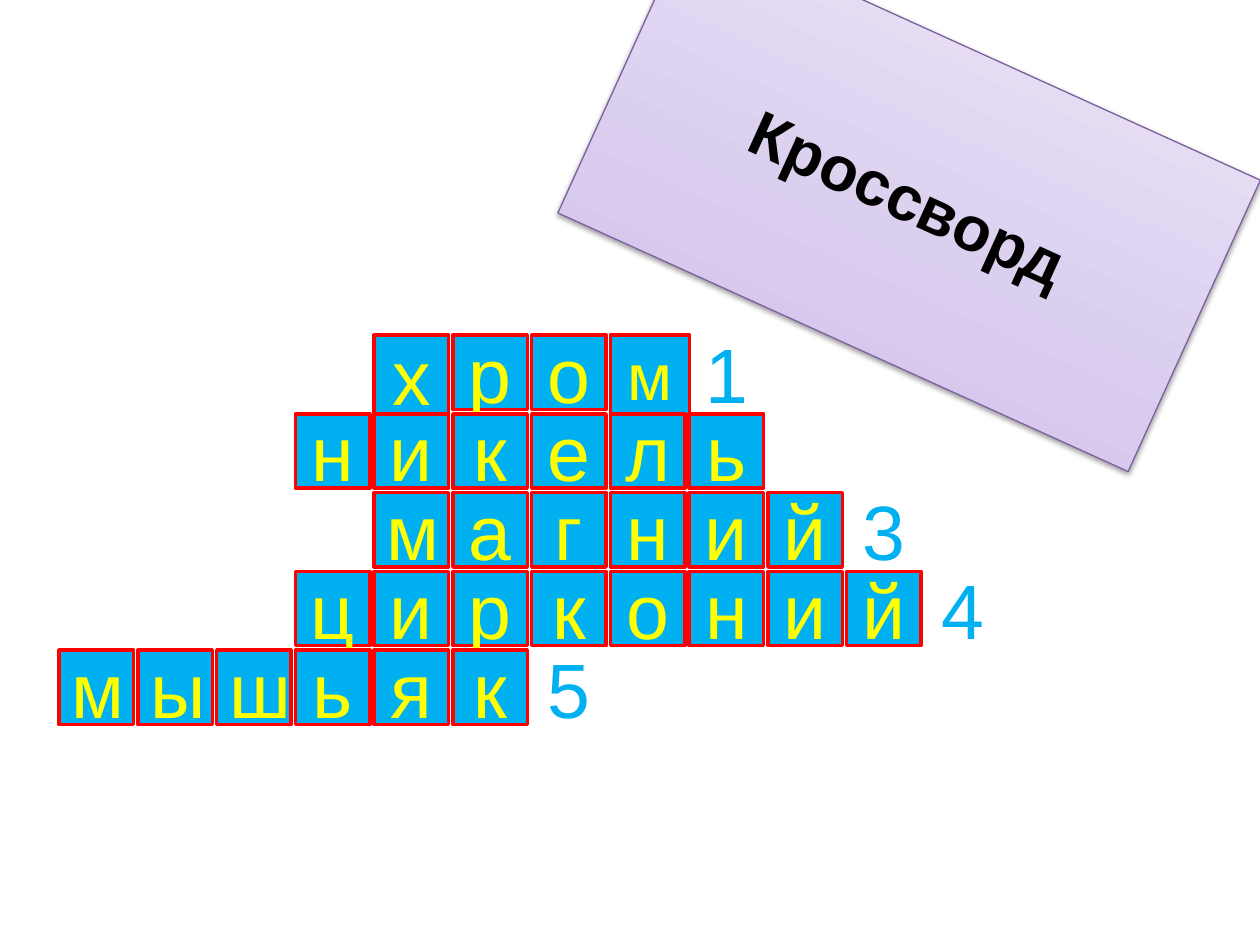
from dataclasses import dataclass

from lxml.etree import fromstring
from pptx import Presentation
from pptx.dml.color import RGBColor
from pptx.enum.shapes import MSO_SHAPE as Kind
from pptx.enum.text import MSO_ANCHOR as Anchor, PP_ALIGN as Align
from pptx.util import Inches, Pt

BLUE = RGBColor(0x00, 0xB0, 0xF0)
RED = RGBColor(0xFF, 0x00, 0x00)
YELLOW = RGBColor(0xFF, 0xFF, 0x00)
BLACK = RGBColor(0x00, 0x00, 0x00)
PLUM = RGBColor(0x7D, 0x60, 0xA0)

FONT = "Arial"
LEFT, TOP = 0.47, 2.66
STEP, SIDE, TALL = 0.625, 0.59, 0.63
NS = 'xmlns:a="http://schemas.openxmlformats.org/drawingml/2006/main"'
FADE = ((0, "C9B5E8"), (35, "D8CBEE"), (100, "F0EAF9"))


@dataclass(frozen=True)
class Word:
    text: str
    col: int
    mark: str = ""


@dataclass(frozen=True)
class Cell:
    text: str
    col: int
    row: int
    wide: float = SIDE
    high: float = SIDE
    size: float = 44
    lead: float = 0

    def box(self) -> tuple:
        spots = (LEFT + self.col * STEP, TOP + self.row * STEP, self.wide, self.high)
        return tuple(Inches(n) for n in spots)


WORDS = (
    Word("хром", 4, "1"),
    Word("никель", 3),
    Word("магний", 4, "3"),
    Word("цирконий", 3, "4"),
    Word("мышьяк", 0, "5"),
)
# The ends of the first word are taller than the other cells.
ODD = {
    (4, 0): {"high": TALL},
    (7, 0): {"wide": TALL, "high": TALL, "size": 37.4, "lead": 7.5},
}


def write(frame, text: str, size: float, color: RGBColor,
          bold: bool = False, lead: float = 0) -> None:
    frame.word_wrap = True
    frame.vertical_anchor = Anchor.MIDDLE
    para = frame.paragraphs[0]
    para.alignment = Align.CENTER
    para.space_before = Pt(lead)
    run = para.add_run()
    run.text = text
    font = run.font
    font.name, font.size, font.bold = FONT, Pt(size), bold
    font.color.rgb = color


def add_cell(slide, cell: Cell) -> None:
    shape = slide.shapes.add_shape(Kind.RECTANGLE, *cell.box())
    shape.shadow.inherit = False
    shape.fill.solid()
    shape.fill.fore_color.rgb = BLUE
    shape.line.color.rgb = RED
    shape.line.width = Pt(2)
    write(shape.text_frame, cell.text, cell.size, YELLOW, lead=cell.lead)


def add_mark(slide, cell: Cell) -> None:
    label = slide.shapes.add_textbox(*cell.box())
    write(label.text_frame, cell.text, cell.size, BLUE)


def add_word(slide, word: Word, row: int) -> None:
    for col, letter in enumerate(word.text, word.col):
        add_cell(slide, Cell(letter, col, row, **ODD.get((col, row), {})))
    if word.mark:
        add_mark(slide, Cell(word.mark, word.col + len(word.text), row))


def set_title(slide) -> None:
    title = slide.shapes.title
    title.left, title.top = Inches(4.73), Inches(0.29)
    title.width, title.height = Inches(4.97), Inches(2.54)
    title.rotation = 24.4
    stops = "".join(
        f'<a:gs pos="{at * 1000}"><a:srgbClr val="{color}"/></a:gs>'
        for at, color in FADE)
    props = title.element.spPr
    props.append(fromstring(
        f'<a:gradFill {NS} rotWithShape="1"><a:gsLst>{stops}</a:gsLst>'
        '<a:lin ang="16200000" scaled="1"/></a:gradFill>'))
    title.line.color.rgb = PLUM
    title.line.width = Pt(0.75)
    props.append(fromstring(
        f'<a:effectLst {NS}><a:outerShdw blurRad="{Pt(3.1)}" dist="{Pt(1.6)}" '
        'dir="5400000" rotWithShape="0"><a:srgbClr val="000000">'
        '<a:alpha val="38000"/></a:srgbClr></a:outerShdw></a:effectLst>'))
    write(title.text_frame, "Кроссворд", 36, BLACK, bold=True)


def main() -> None:
    deck = Presentation()
    deck.slide_width, deck.slide_height = Inches(10), Inches(7.5)
    slide = deck.slides.add_slide(deck.slide_layouts[5])
    set_title(slide)
    for row, word in enumerate(WORDS):
        add_word(slide, word, row)
    deck.save("out.pptx")


if __name__ == "__main__":
    main()
